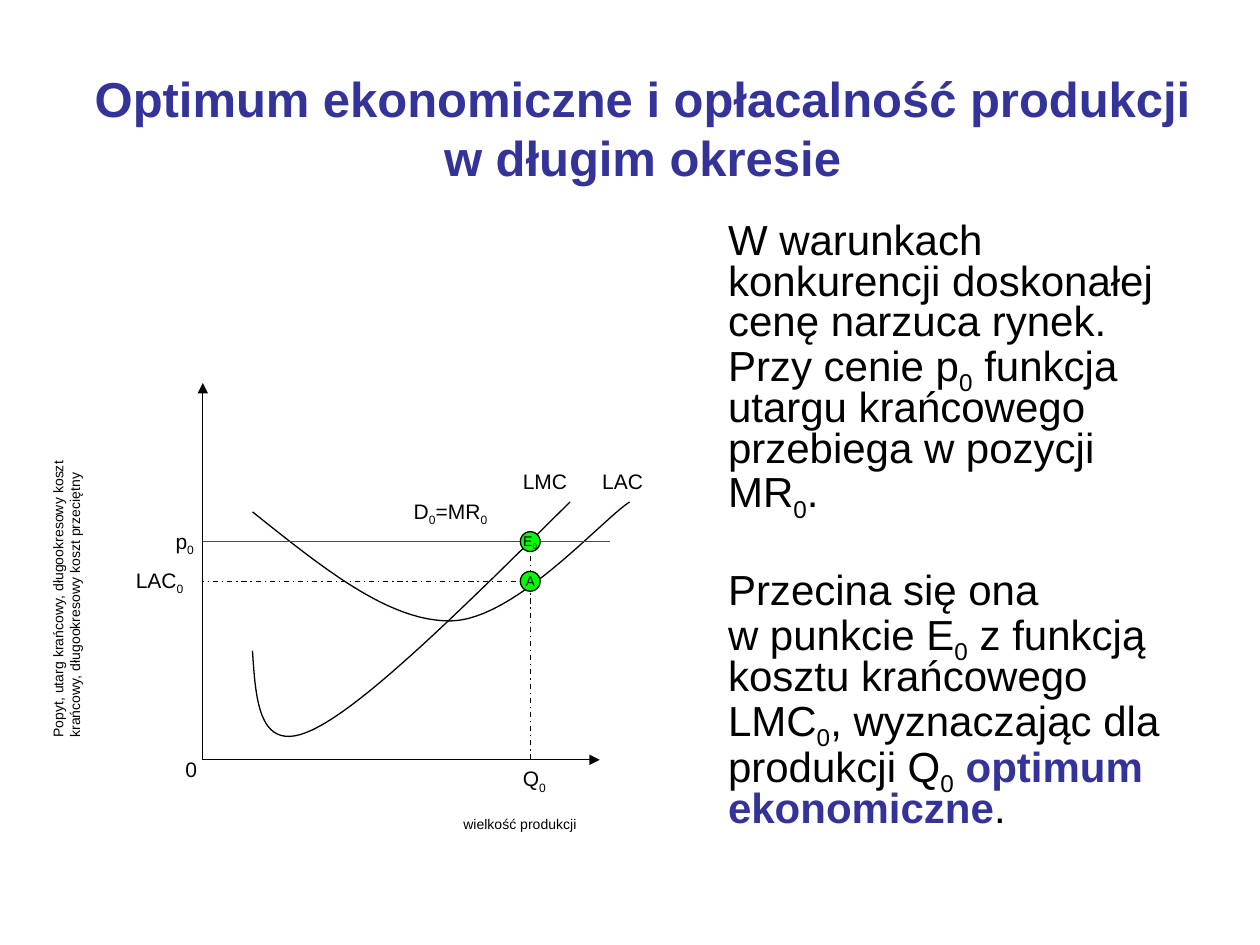
from lxml import etree
from pptx import Presentation
from pptx.dml.color import RGBColor
from pptx.enum.dml import MSO_LINE
from pptx.enum.shapes import MSO_CONNECTOR, MSO_SHAPE
from pptx.enum.text import MSO_ANCHOR, PP_ALIGN
from pptx.oxml.ns import qn
from pptx.util import Inches, Pt

BLACK = RGBColor(0x00, 0x00, 0x00)
NAVY = RGBColor(0x33, 0x33, 0x99)
RED = RGBColor(0xFF, 0x00, 0x00)
GREEN = RGBColor(0x00, 0xFF, 0x00)
STRAIGHT, OVAL = MSO_CONNECTOR.STRAIGHT, MSO_SHAPE.OVAL
CENTER, MIDDLE = PP_ALIGN.CENTER, MSO_ANCHOR.MIDDLE
DASH_DOT = MSO_LINE.DASH_DOT
W, H = Inches(10), Inches(7.5)
COLS, ROWS = 40, 38

LMC = [(5, 27), (5.33, 32.25), (5.7, 37.5), (11, 35),
       (16.4, 32.5), (26.7, 22.2), (37, 12)]
LAC = [(5, 13), (11.9, 18.5), (18.7, 24.1), (25, 24),
       (31.4, 23.9), (40, 14), (43, 12)]
LABELS = [("p_0", -4, 14, 5, 12), ("LAC_0", -8, 18, 9, 12), ("0", -3, 37, 4, 12),
          ("wielkość produkcji", 25, 43, 25, 8), ("Q_0", 31, 38, 8, 12),
          ("D_0=MR_0", 20, 11, 11, 12), ("LMC", 31, 8, 9, 12), ("LAC", 39, 8, 11, 12)]
AXIS_TITLE = ("Popyt, utarg krańcowy, długookresowy koszt krańcowy, "
              "długookresowy koszt przeciętny")


def share(x, y, w, h):
    """Return a box given as shares of the slide."""
    return int(W * x), int(H * y), int(W * w), int(H * h)


def write(p, text, size, color=BLACK, bold=False, align=None):
    """Add text to a paragraph; an underscore lowers the next character."""
    if align is not None:
        p.alignment = align
    for i, line in enumerate(text.split("\n")):
        if i:
            p.add_line_break()
        head, *tails = line.split("_")
        pieces = [(head, False)]
        for tail in tails:
            pieces += [(tail[0], True), (tail[1:], False)]
        for piece, lowered in pieces:
            if piece:
                r = p.add_run()
                r.text = piece
                r.font.name, r.font.size, r.font.bold = "Arial", Pt(size), bold
                r.font.color.rgb = color
                if lowered:
                    r.font._element.set("baseline", "-25000")


def textbox(s, box):
    """Add an empty wrapping text box and return it."""
    sp = s.shapes.add_textbox(*box)
    sp.text_frame.word_wrap = True
    return sp


def title(s, box):
    """Place the slide title."""
    tf = textbox(s, box).text_frame
    tf.vertical_anchor = MIDDLE
    write(tf.paragraphs[0], "Optimum ekonomiczne i opłacalność produkcji w długim okresie",
          28, color=NAVY, bold=True, align=CENTER)


def explanation(s, box):
    """Place the two paragraphs beside the diagram."""
    tf = textbox(s, box).text_frame
    first, second = tf.paragraphs[0], tf.add_paragraph()
    for p in (first, second):
        p.line_spacing = 0.8
        p._p.get_or_add_pPr().set("marL", str(Inches(0.38)))
    second.space_before = Pt(32)
    write(first, "W warunkach konkurencji doskonałej cenę narzuca rynek. Przy cenie p_0 "
          "funkcja utargu krańcowego przebiega w pozycji MR_0.", 24)
    write(second, "Przecina się ona\nw punkcie E_0 z funkcją kosztu krańcowego LMC_0, "
          "wyznaczając dla produkcji Q_0 ", 24)
    write(second, "optimum ekonomiczne", 24, color=NAVY, bold=True)
    write(second, ".", 24)


def line(s, start, end, color=BLACK, dash=None, arrow=False):
    """Draw a thin straight line between two points."""
    c = s.shapes.add_connector(STRAIGHT, *start, *end)
    c.line.color.rgb, c.line.width = color, Pt(0.75)
    if dash is not None:
        c.line.dash_style = dash
    if arrow:
        etree.SubElement(c.line._get_or_add_ln(), qn("a:tailEnd"), type="triangle")
    etree.SubElement(c._element.spPr, qn("a:effectLst"))


def bezier(nodes, steps=24):
    """Return points along a chain of cubic curves."""
    points = [nodes[0]]
    for k in range(0, len(nodes) - 1, 3):
        for i in range(1, steps + 1):
            t = i / steps
            weights = ((1 - t) ** 3, 3 * t * (1 - t) ** 2, 3 * t * t * (1 - t), t ** 3)
            points.append(tuple(sum(w * n[axis] for w, n in zip(weights, nodes[k:k + 4]))
                                for axis in (0, 1)))
    return points


def curve(s, points):
    """Draw an open, unfilled outline."""
    fb = s.shapes.build_freeform(*points[0])
    fb.add_line_segments(points[1:], close=False)
    sp = fb.convert_to_shape()
    sp.shadow.inherit = False
    sp.fill.background()
    sp.line.color.rgb, sp.line.width = BLACK, Pt(0.75)


def marker(s, box, text):
    """Place a green point with its letter."""
    sp = s.shapes.add_shape(OVAL, *box)
    sp.shadow.inherit = False
    sp.fill.solid()
    sp.fill.fore_color.rgb = GREEN
    sp.line.color.rgb, sp.line.width = BLACK, Pt(0.75)
    tf = sp.text_frame
    tf.word_wrap, tf.vertical_anchor = False, MIDDLE
    tf.margin_left = tf.margin_right = tf.margin_top = tf.margin_bottom = 0
    write(tf.paragraphs[0], text, 8, align=CENTER)


def diagram(s, box):
    """Draw the cost diagram on a grid whose axes frame the box."""
    left, top, width, height = box

    def at(col, row):
        """Return the slide position of a grid point."""
        return round(left + width * col / COLS), round(top + height * row / ROWS)

    def cells(col, row, cols, rows):
        """Return the box that covers a span of the grid."""
        return *at(col, row), round(width * cols / COLS), round(height * rows / ROWS)

    line(s, at(0, ROWS), at(0, 0), arrow=True)
    line(s, at(0, ROWS), at(COLS, ROWS), arrow=True)
    for nodes in (LMC, LAC):
        curve(s, [at(*point) for point in bezier(nodes)])
    line(s, at(0, 16), at(41, 16), color=RED)
    line(s, at(33, 16), at(33, ROWS), dash=DASH_DOT)
    line(s, at(33, 20), at(0, 20), dash=DASH_DOT)
    for row, text in ((16, "E_0"), (20, "A")):
        marker(s, cells(32, row - 1, 2, 2), text)
    for text, col, row, cols, size in LABELS:
        write(textbox(s, cells(col, row, cols, 4)).text_frame.paragraphs[0], text, size)
    sp = textbox(s, cells(-31.75, 16.65, 36, 4.7))
    sp.rotation = 270
    write(sp.text_frame.paragraphs[0], AXIS_TITLE, 8)


def main():
    """Build the slide and save it."""
    prs = Presentation()
    prs.slide_width, prs.slide_height = W, H
    s = prs.slides.add_slide(prs.slide_layouts[6])
    title(s, share(0.06, 0.05, 0.9, 0.17))
    explanation(s, share(0.53, 0.23, 0.42, 0.66))
    diagram(s, (Inches(1.61), Inches(3.04), Inches(3.15), Inches(2.99)))
    prs.save("out.pptx")


if __name__ == "__main__":
    main()
